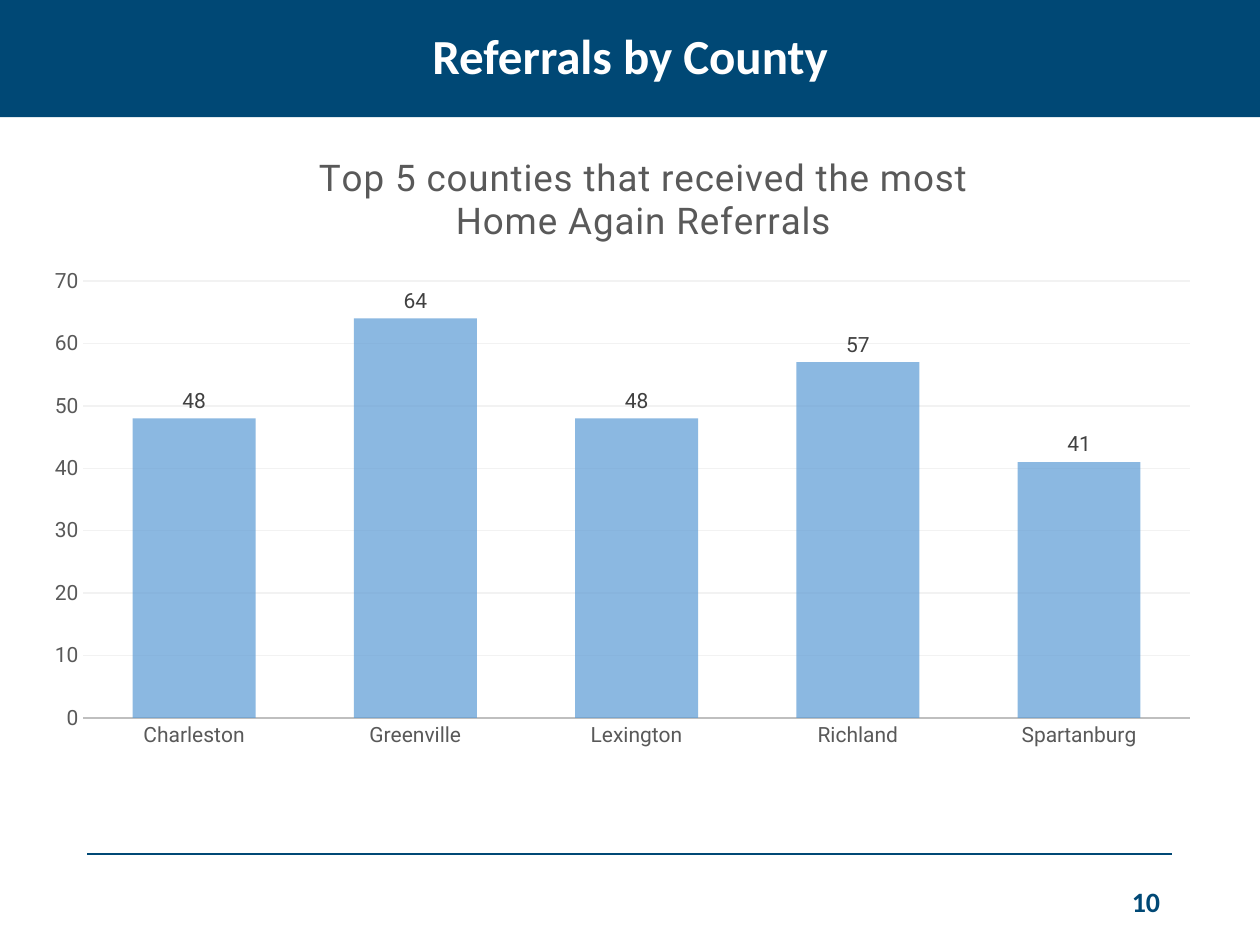
from dataclasses import dataclass

from lxml import etree
from pptx import Presentation
from pptx.chart.data import CategoryChartData
from pptx.dml.color import RGBColor
from pptx.enum.chart import XL_CHART_TYPE, XL_LABEL_POSITION, XL_TICK_MARK
from pptx.enum.shapes import MSO_CONNECTOR
from pptx.enum.text import MSO_ANCHOR, PP_ALIGN
from pptx.oxml.ns import qn
from pptx.util import Pt

COLUMNS = XL_CHART_TYPE.COLUMN_CLUSTERED
LABEL_ABOVE = XL_LABEL_POSITION.OUTSIDE_END
NO_TICK = XL_TICK_MARK.NONE
STRAIGHT = MSO_CONNECTOR.STRAIGHT
MIDDLE = MSO_ANCHOR.MIDDLE
CENTER, RIGHT = PP_ALIGN.CENTER, PP_ALIGN.RIGHT
TITLE_ONLY = 5

REFERRALS = {"Charleston": 48, "Greenville": 64, "Lexington": 48,
             "Richland": 57, "Spartanburg": 41}


@dataclass(frozen=True)
class Theme:
    navy: str = "004875"
    white: str = "FFFFFF"
    column: str = "5B9BD5"
    axis_text: str = "595959"
    label_text: str = "404040"
    axis_line: str = "BFBFBF"
    grid: str = "F2F2F2"
    slide_font: str = "Calibri"
    chart_font: str = "Roboto"
    title_size: float = 28
    chart_title_size: float = 21
    number_size: float = 16
    label_size: float = 12


def style_font(font, name, size, color, bold=False):
    font.name, font.size, font.bold = name, Pt(size), bold
    font.color.rgb = RGBColor.from_string(color)


def write_text(text_frame, text, *, font, size, color, bold=False,
               align=CENTER, line_spacing=None, tracking=None):
    """Write one paragraph per line of text; tracking is in points."""
    for index, line in enumerate(text.split("\n")):
        paragraph = text_frame.add_paragraph() if index else text_frame.paragraphs[0]
        paragraph.alignment = align
        if line_spacing:
            paragraph.line_spacing = line_spacing
        run = paragraph.add_run()
        run.text = line
        style_font(run.font, font, size, color, bold)
        if tracking:
            run.font._element.set("spc", str(round(tracking * 100)))


def set_layout(parent, index, inner=False, **fractions):
    """Place a chart part by fractions of the chart area."""
    for old_layout in parent.findall(qn("c:layout")):
        parent.remove(old_layout)
    layout = etree.Element(qn("c:layout"))
    manual = etree.SubElement(layout, qn("c:manualLayout"))
    values = {"layoutTarget": "inner"} if inner else {}
    values.update(xMode="edge", yMode="edge", **fractions)
    for tag, value in values.items():
        etree.SubElement(manual, qn(f"c:{tag}")).set("val", str(value))
    parent.insert(index, layout)


class SlideBuilder:
    def __init__(self, slide, theme):
        self.slide, self.theme = slide, theme

    def title(self, text, left, top, width, height):
        shape = self.slide.shapes.title
        shape.left, shape.top, shape.width, shape.height = map(
            Pt, (left, top, width, height))
        shape.fill.solid()
        shape.fill.fore_color.rgb = RGBColor.from_string(self.theme.navy)
        shape.text_frame.vertical_anchor = MIDDLE
        write_text(shape.text_frame, text, font=self.theme.slide_font,
                   size=self.theme.title_size, color=self.theme.white,
                   bold=True, line_spacing=0.9)

    def rule(self, left, right, y):
        line = self.slide.shapes.add_connector(
            STRAIGHT, Pt(left), Pt(y), Pt(right), Pt(y))
        line.line.color.rgb = RGBColor.from_string(self.theme.navy)
        line.line.width = Pt(1)
        etree.SubElement(line._element.spPr, qn("a:effectLst"))

    def page_number(self, text, left, top, width, height):
        box = self.slide.shapes.add_textbox(*map(Pt, (left, top, width, height)))
        box.text_frame.word_wrap = True
        box.text_frame.vertical_anchor = MIDDLE
        write_text(box.text_frame, text, font=self.theme.slide_font,
                   size=self.theme.number_size, color=self.theme.navy,
                   bold=True, align=RIGHT)

    def column_chart(self, title, values, left, top, width, height):
        theme = self.theme
        data = CategoryChartData(number_format="#,##0")
        data.categories = list(values)
        data.add_series("Series 1", list(values.values()))
        chart = self.slide.shapes.add_chart(
            COLUMNS, *map(Pt, (left, top, width, height)), data).chart
        style_font(chart.font, theme.chart_font, theme.label_size, theme.axis_text)
        chart.has_legend = False
        chart.has_title = True
        write_text(chart.chart_title.text_frame, title, font=theme.chart_font,
                   size=theme.chart_title_size, color=theme.axis_text, tracking=0.5)
        set_layout(chart.chart_title.element, 1, x=0.24, y=0.02)
        set_layout(chart.element.chart.plotArea, 0, inner=True,
                   x=0.044, y=0.229, w=0.936, h=0.702)
        self.format_axes(chart)
        self.format_columns(chart.plots[0])

    def format_axes(self, chart):
        theme = self.theme
        category_axis, value_axis = chart.category_axis, chart.value_axis
        for axis in (category_axis, value_axis):
            axis.major_tick_mark = axis.minor_tick_mark = NO_TICK
            style_font(axis.tick_labels.font, theme.chart_font,
                       theme.label_size, theme.axis_text)
        category_axis.format.line.color.rgb = RGBColor.from_string(theme.axis_line)
        category_axis.format.line.width = Pt(1.25)
        value_axis.format.line.fill.background()
        value_axis.minimum_scale, value_axis.maximum_scale = 0, 70
        value_axis.major_unit = 10
        value_axis.tick_labels.number_format = "#,##0"
        value_axis.tick_labels.number_format_is_linked = False
        grid_line = value_axis.major_gridlines.format.line
        grid_line.color.rgb = RGBColor.from_string(theme.grid)
        grid_line.width = Pt(0.75)

    def format_columns(self, plot):
        theme = self.theme
        plot.vary_by_categories = False
        plot.gap_width, plot.overlap = 80, 25
        series = plot.series[0]
        series.format.fill.solid()
        series.format.fill.fore_color.rgb = RGBColor.from_string(theme.column)
        color = series.format._element.spPr.find(".//" + qn("a:srgbClr"))
        etree.SubElement(color, qn("a:alpha")).set("val", "70000")
        labels = series.data_labels
        labels.show_value = True
        labels.position = LABEL_ABOVE
        labels.number_format = "#,##0"
        labels.number_format_is_linked = False
        style_font(labels.font, theme.chart_font, theme.label_size, theme.label_text)


def main():
    presentation = Presentation()
    presentation.slide_width, presentation.slide_height = Pt(720), Pt(540)
    slide = presentation.slides.add_slide(presentation.slide_layouts[TITLE_ONLY])
    builder = SlideBuilder(slide, Theme())
    builder.rule(50, 670, 488)
    builder.title("Referrals by County", 0, 0, 720, 67)
    builder.page_number("10", 508, 500.5, 162, 29)
    builder.column_chart(
        "Top 5 counties that received the most\nHome Again Referrals",
        REFERRALS, 18, 79.2, 675.4, 355.7)
    presentation.save("out.pptx")


if __name__ == "__main__":
    main()
